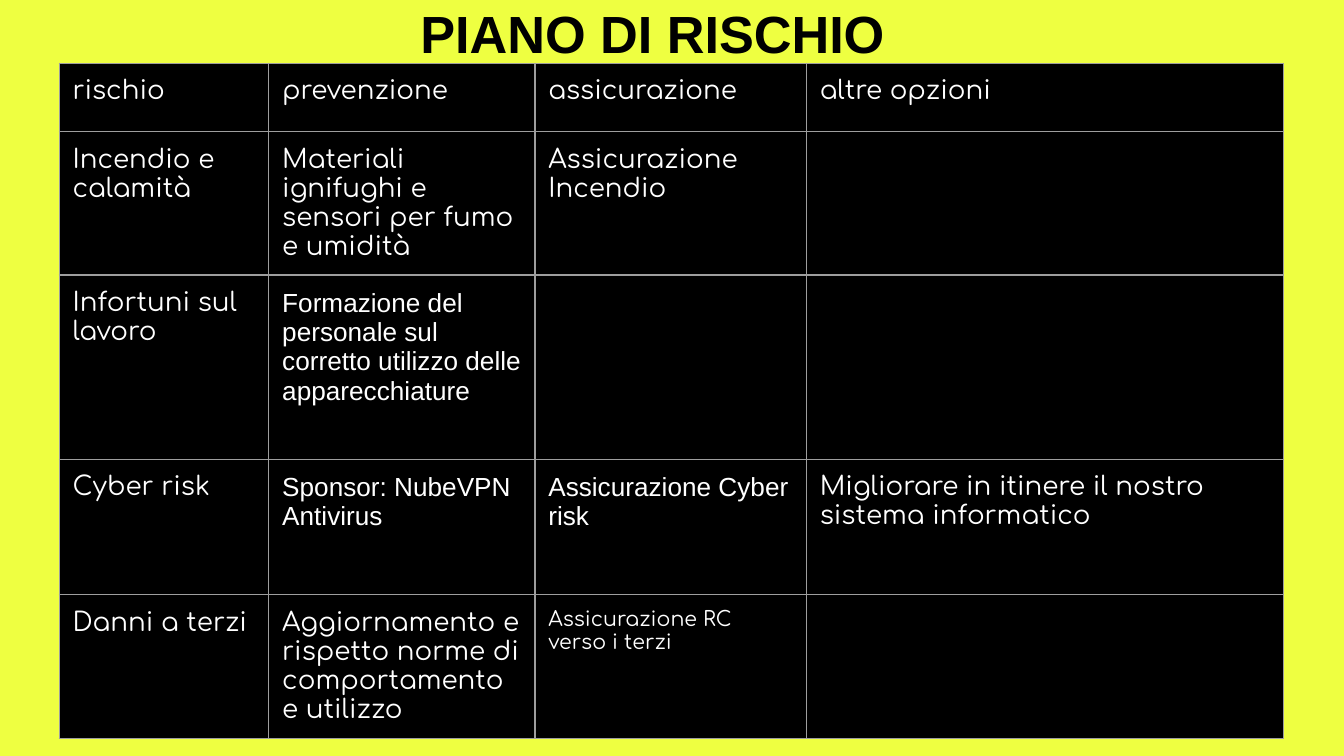
from lxml import etree
from pptx import Presentation
from pptx import util as u
from pptx.dml.color import RGBColor
from pptx.enum import text
from pptx.oxml.ns import qn

COLORS = {"background": "EEFF41", "cell": "000000", "border": "9E9E9E",
          "body": "FFFFFF", "title": "000000"}
COLS = [1.56, 1.98, 2.02, 3.55]
ROWS = [0.51, 0.9, 1.37, 1.01, 0.78]
LEFT, TOP = 0.44, 0.47
INSET = u.Inches(0.1)

CELLS = [
    ["rischio", "prevenzione", "assicurazione", "altre opzioni"],
    ["Incendio e calamità", "Materiali ignifughi e sensori per fumo e umidità",
     "Assicurazione Incendio", ""],
    ["Infortuni sul lavoro",
     "Formazione del personale sul corretto utilizzo delle apparecchiature", "", ""],
    ["Cyber risk", "Sponsor: NubeVPN\nAntivirus", "Assicurazione Cyber risk",
     "Migliorare in itinere il nostro sistema informatico"],
    ["Danni a terzi", "Aggiornamento e rispetto norme di comportamento e utilizzo",
     "Assicurazione RC verso i terzi", ""],
]
ARIAL_CELLS = {(2, 1), (3, 1), (3, 2)}
SMALL_CELLS = {(4, 2)}


def style_text(tf, font, size, color, bold=False):
    for p in tf.paragraphs:
        for r in p.runs:
            r.font.name, r.font.size, r.font.bold = font, u.Pt(size), bold
            r.font.color.rgb = RGBColor.from_string(COLORS[color])


def add_borders(cell):
    tc_pr = cell._tc.get_or_add_tcPr()
    for side in ("lnL", "lnR", "lnT", "lnB"):
        ln = etree.SubElement(tc_pr, qn(f"a:{side}"), w=str(u.Pt(0.75)))
        fill = etree.SubElement(ln, qn("a:solidFill"))
        etree.SubElement(fill, qn("a:srgbClr"), val=COLORS["border"])


prs = Presentation()
prs.slide_width = u.Inches(10)
prs.slide_height = prs.slide_width * 9 // 16
slide = prs.slides.add_slide(prs.slide_layouts[6])
slide.background.fill.solid()
slide.background.fill.fore_color.rgb = RGBColor.from_string(COLORS["background"])

# Risk table
table = slide.shapes.add_table(
    len(ROWS), len(COLS), u.Inches(LEFT), u.Inches(TOP),
    u.Inches(sum(COLS)), u.Inches(sum(ROWS))).table
table.first_row = table.horz_banding = False
for column, width in zip(table.columns, COLS):
    column.width = u.Inches(width)
for row, height in zip(table.rows, ROWS):
    row.height = u.Inches(height)

for i, labels in enumerate(CELLS):
    for j, label in enumerate(labels):
        cell = table.cell(i, j)
        cell.margin_left = cell.margin_right = INSET
        cell.margin_top = cell.margin_bottom = INSET
        add_borders(cell)
        cell.fill.solid()
        cell.fill.fore_color.rgb = RGBColor.from_string(COLORS["cell"])
        if label:
            cell.text_frame.text = label
            style_text(cell.text_frame,
                       "Arial" if (i, j) in ARIAL_CELLS else "Comfortaa",
                       11 if (i, j) in SMALL_CELLS else 14, "body")

# Title
title = slide.shapes.add_textbox(
    u.Inches(3.03), u.Inches(-0.09), u.Inches(3.94), u.Inches(0.67))
tf = title.text_frame
tf.word_wrap = True
tf.auto_size = text.MSO_AUTO_SIZE.SHAPE_TO_FIT_TEXT
tf.margin_left = tf.margin_right = tf.margin_top = tf.margin_bottom = INSET
tf.text = "PIANO DI RISCHIO"
style_text(tf, "Arial", 28, "title", bold=True)

prs.save("out.pptx")
